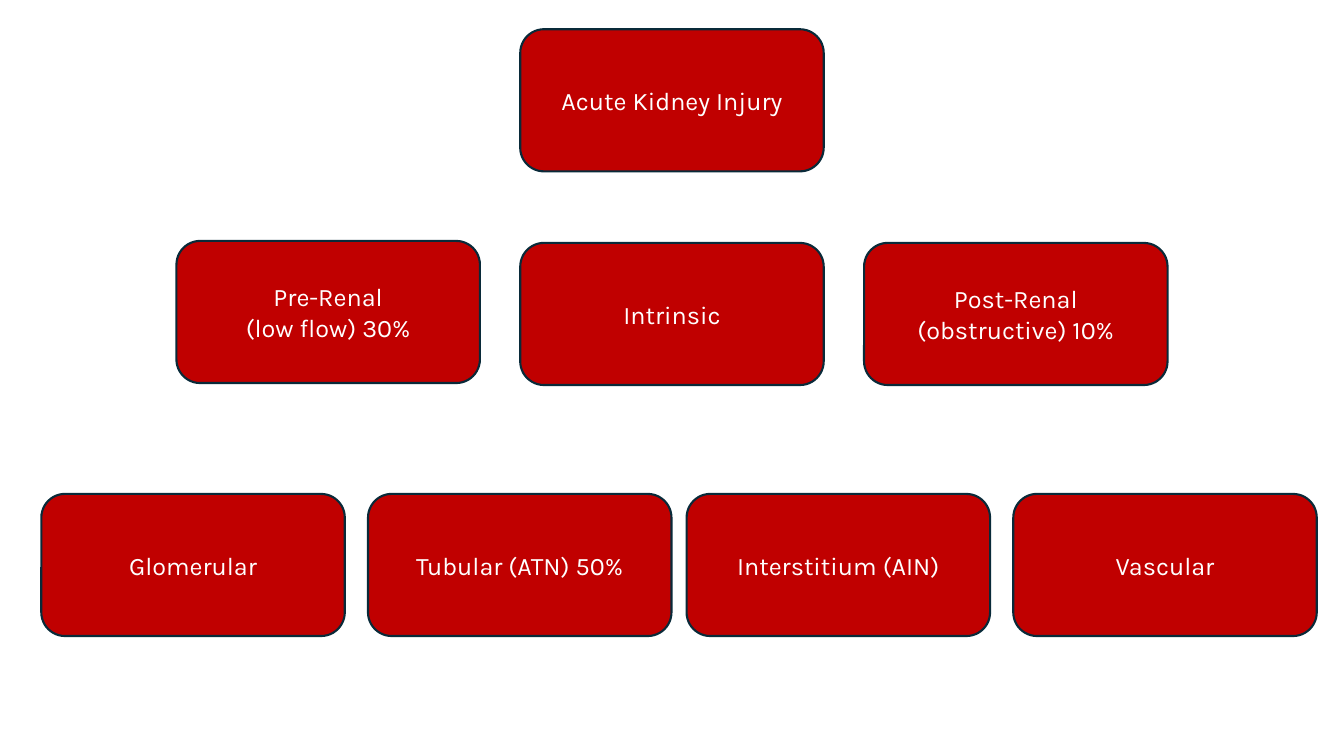
from dataclasses import dataclass

from pptx import Presentation
from pptx.dml.color import RGBColor
from pptx.enum.shapes import MSO_SHAPE
from pptx.enum.text import MSO_ANCHOR, PP_ALIGN
from pptx.util import Inches, Pt

ROUNDED = MSO_SHAPE.ROUNDED_RECTANGLE
MIDDLE = MSO_ANCHOR.MIDDLE
CENTER = PP_ALIGN.CENTER
BLANK_LAYOUT = 6

# Each box: left, top, lines of text (inches)
BOXES = [
    (5.16, 0.29, ["Acute Kidney Injury"]),
    (1.75, 2.39, ["Pre-Renal", "(low flow) 30%"]),
    (5.16, 2.41, ["Intrinsic"]),
    (8.57, 2.41, ["Post-Renal", "(obstructive) 10%"]),
    (0.41, 4.9, ["Glomerular"]),
    (3.65, 4.9, ["Tubular (ATN) 50%"]),
    (6.81, 4.9, ["Interstitium (AIN)"]),
    (10.05, 4.9, ["Vascular"]),
]
BOX_WIDTH, BOX_HEIGHT = 3.01, 1.41


@dataclass(frozen=True)
class Theme:
    fill = RGBColor.from_string("C00000")
    outline = RGBColor.from_string("092A39")
    text = RGBColor.from_string("FFFFFF")
    font = "Karla"
    text_size = Pt(18)
    outline_width = Pt(1.5)


THEME = Theme()


def add_box(page, left, top, lines):
    box = page.shapes.add_shape(
        ROUNDED, Inches(left), Inches(top), Inches(BOX_WIDTH), Inches(BOX_HEIGHT)
    )
    box.shadow.inherit = False
    box.fill.solid()
    box.fill.fore_color.rgb = THEME.fill
    box.line.color.rgb = THEME.outline
    box.line.width = THEME.outline_width

    frame = box.text_frame
    frame.word_wrap = True
    frame.vertical_anchor = MIDDLE
    for index, line in enumerate(lines):
        para = frame.add_paragraph() if index else frame.paragraphs[0]
        para.alignment = CENTER
        span = para.add_run()
        span.text = line
        span.font.name = THEME.font
        span.font.size = THEME.text_size
        span.font.color.rgb = THEME.text


def main():
    deck = Presentation()
    deck.slide_width = Inches(13.33)
    deck.slide_height = Inches(7.5)
    page = deck.slides.add_slide(deck.slide_layouts[BLANK_LAYOUT])
    for left, top, lines in BOXES:
        add_box(page, left, top, lines)
    deck.save("out.pptx")


if __name__ == "__main__":
    main()
